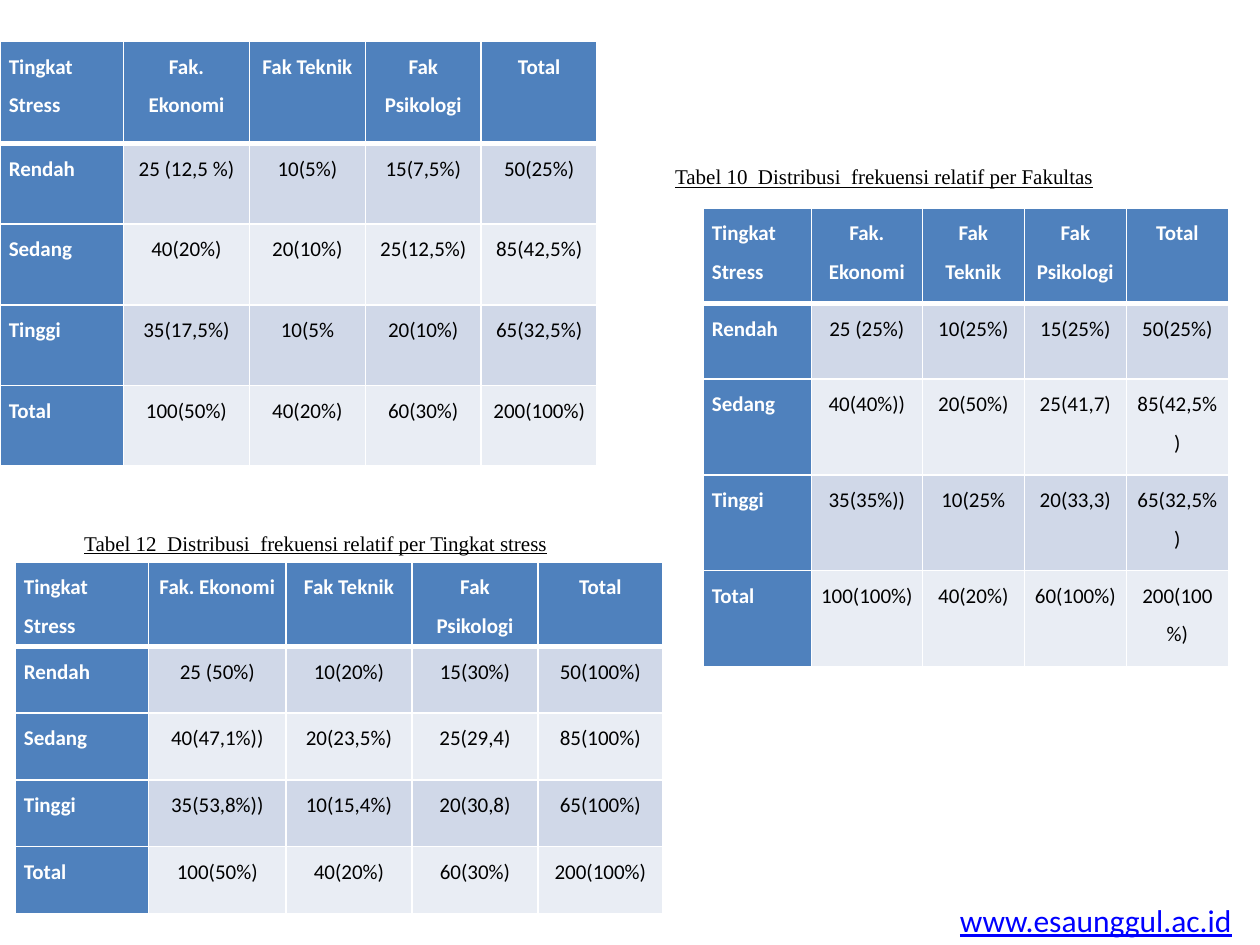
from dataclasses import dataclass

from lxml import etree
from pptx import Presentation
from pptx.dml.color import RGBColor
from pptx.enum.text import MSO_ANCHOR, PP_ALIGN
from pptx.oxml.ns import qn
from pptx.util import Inches, Pt

CENTER, JUSTIFY = PP_ALIGN.CENTER, PP_ALIGN.JUSTIFY
TOP, MIDDLE = MSO_ANCHOR.TOP, MSO_ANCHOR.MIDDLE

WHITE = RGBColor(0xFF, 0xFF, 0xFF)
BLACK = RGBColor(0x00, 0x00, 0x00)
LINK_BLUE = RGBColor(0x00, 0x00, 0xFF)
HEADER_BLUE = RGBColor(0x4F, 0x81, 0xBD)
BANDS = (RGBColor(0xE9, 0xED, 0xF4), RGBColor(0xD0, 0xD8, 0xE8))

SLIDE_W, SLIDE_H = 10, 7.5
HEADER = ("Tingkat Stress", "Fak. Ekonomi", "Fak Teknik", "Fak Psikologi", "Total")
LEVELS = ("Rendah", "Sedang", "Tinggi", "Total")


@dataclass(frozen=True)
class FrequencyTable:
    left: float
    top: float
    cols: tuple[float, ...]
    rows: tuple[float, ...]
    values: tuple[tuple[str, ...], ...]


@dataclass(frozen=True)
class Label:
    text: str
    left: float
    top: float
    width: float
    height: float
    font: str
    size: int
    color: RGBColor
    anchor: MSO_ANCHOR
    wrap: bool = True


TABLES = (
    FrequencyTable(
        0, 0.33, (0.98, 1, 0.92, 0.92, 0.92), (0.81,) + (0.64,) * 4,
        (("25 (12,5 %)", "10(5%)", "15(7,5%)", "50(25%)"),
         ("40(20%)", "20(10%)", "25(12,5%)", "85(42,5%)"),
         ("35(17,5%)", "10(5%", "20(10%)", "65(32,5%)"),
         ("100(50%)", "40(20%)", "60(30%)", "200(100%)")),
    ),
    FrequencyTable(
        5.58, 1.65, (0.86, 0.88, 0.81, 0.81, 0.81), (0.76, 0.6) + (0.76,) * 3,
        (("25 (25%)", "10(25%)", "15(25%)", "50(25%)"),
         ("40(40%))", "20(50%)", "25(41,7)", "85(42,5%)"),
         ("35(35%))", "10(25%", "20(33,3)", "65(32,5%)"),
         ("100(100%)", "40(20%)", "60(100%)", "200(100%)")),
    ),
    FrequencyTable(
        0.12, 4.46, (1.06, 1.09, 1, 1, 0.99), (0.67,) + (0.53,) * 4,
        (("25 (50%)", "10(20%)", "15(30%)", "50(100%)"),
         ("40(47,1%))", "20(23,5%)", "25(29,4)", "85(100%)"),
         ("35(53,8%))", "10(15,4%)", "20(30,8)", "65(100%)"),
         ("100(50%)", "40(20%)", "60(30%)", "200(100%)")),
    ),
)

LABELS = (
    Label("www.esaunggul.ac.id", 7.52, 7.1, 2.38, 0.4,
          "Calibri", 18, LINK_BLUE, TOP, wrap=False),
    Label("Tabel 10  Distribusi  frekuensi relatif per Fakultas", 5.26, 1.15,
          SLIDE_W, 0.5, "Times New Roman", 12, BLACK, MIDDLE),
    Label("Tabel 12  Distribusi  frekuensi relatif per Tingkat stress", 0.57, 4.16,
          6.99, 0.3, "Times New Roman", 12, BLACK, MIDDLE),
)


def set_borders(cell, row: int) -> None:
    """Draw white cell borders, with a thick rule under the header row."""
    tcPr = cell._tc.get_or_add_tcPr()
    widths = {"a:lnL": 1, "a:lnR": 1,
              "a:lnT": 3 if row == 1 else 1, "a:lnB": 3 if row == 0 else 1}
    for tag, width in widths.items():
        ln = etree.SubElement(tcPr, qn(tag), w=str(Pt(width)))
        fill = etree.SubElement(ln, qn("a:solidFill"))
        etree.SubElement(fill, qn("a:srgbClr"), val=str(WHITE))


def format_cell(cell, text: str, row: int, col: int) -> None:
    heading = row == 0 or col == 0
    set_borders(cell, row)
    cell.fill.solid()
    cell.fill.fore_color.rgb = HEADER_BLUE if heading else BANDS[row % 2]
    cell.margin_left = cell.margin_right = Inches(0.07)
    cell.margin_top = cell.margin_bottom = 0
    cell.text = text
    p = cell.text_frame.paragraphs[0]
    p.alignment = JUSTIFY if col == 0 else CENTER
    p.line_spacing = 1.5
    p.space_before = Pt(6)
    font = p.runs[0].font
    font.name, font.size, font.bold = "Calibri", Pt(12), heading
    font.color.rgb = WHITE if heading else BLACK


def add_frequency_table(slide, spec: FrequencyTable) -> None:
    table = slide.shapes.add_table(
        len(spec.rows), len(spec.cols), Inches(spec.left), Inches(spec.top),
        Inches(sum(spec.cols)), Inches(sum(spec.rows))).table
    for column, width in zip(table.columns, spec.cols):
        column.width = Inches(width)
    for row, height in zip(table.rows, spec.rows):
        row.height = Inches(height)
    body = [(level, *values) for level, values in zip(LEVELS, spec.values)]
    for r, texts in enumerate([HEADER, *body]):
        for c, text in enumerate(texts):
            format_cell(table.cell(r, c), text, r, c)


def add_label(slide, label: Label) -> None:
    box = slide.shapes.add_textbox(Inches(label.left), Inches(label.top),
                                   Inches(label.width), Inches(label.height))
    tf = box.text_frame
    tf.word_wrap = label.wrap
    tf.vertical_anchor = label.anchor
    tf.text = label.text
    font = tf.paragraphs[0].runs[0].font
    font.name, font.size, font.underline = label.font, Pt(label.size), True
    font.color.rgb = label.color


def main() -> None:
    prs = Presentation()
    prs.slide_width, prs.slide_height = Inches(SLIDE_W), Inches(SLIDE_H)
    slide = prs.slides.add_slide(prs.slide_layouts[6])
    for table in TABLES:
        add_frequency_table(slide, table)
    for label in LABELS:
        add_label(slide, label)
    prs.save("out.pptx")


if __name__ == "__main__":
    main()
